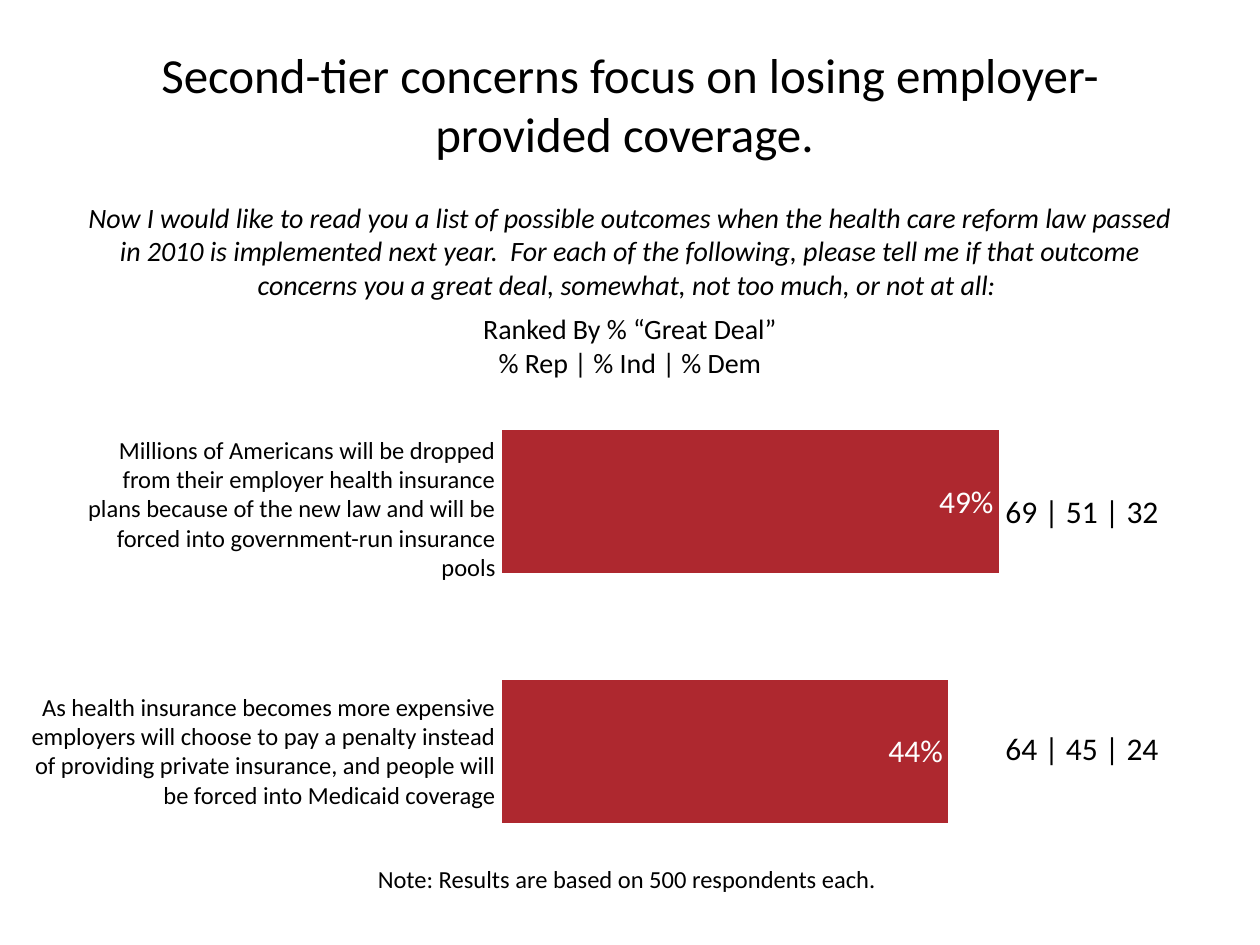
from collections import namedtuple

from pptx import Presentation
from pptx import util as u
from pptx.chart import data as chart_data
from pptx.dml.color import RGBColor
from pptx.enum import chart as chart_enum
from pptx.enum import text

BLACK = RGBColor(0x00, 0x00, 0x00)
WHITE = RGBColor(0xFF, 0xFF, 0xFF)
RED = RGBColor(0xAE, 0x28, 0x2F)
FONT = "Calibri"
ALIGN = text.PP_ALIGN

Box = namedtuple("Box", "left top width height")
Concern = namedtuple("Concern", "wording share parties label_box parties_top")

TITLE = "Second-tier concerns focus on losing employer-provided coverage. "
QUESTION = (
    "Now I would like to read you a list of possible outcomes when the health care "
    "reform law passed in 2010 is implemented next year.  For each of the following, "
    "please tell me if that outcome concerns you a great deal, somewhat, not too much, "
    "or not at all: "
)
NOTE = "Note: Results are based on 500 respondents each."
CONCERNS = [
    Concern(
        "Millions of Americans will be dropped from their employer health insurance "
        "plans because of the new law and will be forced into government-run insurance pools",
        0.49, "69 | 51 | 32", Box(23.8, 35.3, 255.6, 92.2), 68.4,
    ),
    Concern(
        "As health insurance becomes more expensive employers will choose to pay a penalty "
        "instead of providing private insurance, and people will be forced into Medicaid coverage",
        0.44, "64 | 45 | 24", Box(0, 182.2, 279.4, 74.9), 203.8,
    ),
]


def format_font(font, size, color=BLACK):
    """Set the typeface, size and colour of a font."""
    font.name = FONT
    font.size = u.Pt(size)
    font.color.rgb = color


def place(shape, box):
    """Move and size a shape to fill a box given in points."""
    shape.left, shape.top, shape.width, shape.height = map(u.Pt, box)


def format_text(shape, size, alignment):
    """Format every paragraph and run of a shape alike."""
    for paragraph in shape.text_frame.paragraphs:
        paragraph.alignment = alignment
        for run in paragraph.runs:
            format_font(run.font, size)


def add_text(slide, box, wording, size, alignment=ALIGN.LEFT, wrap=True):
    """Add a formatted text box and return it."""
    shape = slide.shapes.add_textbox(*map(u.Pt, box))
    shape.text_frame.word_wrap = wrap
    shape.text_frame.auto_size = text.MSO_AUTO_SIZE.SHAPE_TO_FIT_TEXT
    shape.text_frame.text = wording
    format_text(shape, size, alignment)
    return shape


def add_title(slide, box):
    """Fill the title placeholder."""
    title = slide.shapes.title
    place(title, box)
    title.text_frame.text = TITLE
    title.text_frame.vertical_anchor = text.MSO_ANCHOR.MIDDLE
    format_text(title, 28, ALIGN.CENTER)


def add_question(slide, box):
    """Add the survey question in italics above the two ranking lines."""
    lines = [QUESTION, "Ranked By % “Great Deal”", "% Rep | % Ind | % Dem"]
    shape = add_text(slide, box, "\n".join(lines), 16, ALIGN.CENTER)
    question = shape.text_frame.paragraphs[0]
    question.space_after = u.Pt(6)
    question.runs[0].font.italic = True


def add_bar_chart(slide, box):
    """Add the bars of the share concerned a great deal, first concern on top."""
    data = chart_data.CategoryChartData(number_format="0%")
    data.categories = [str(number + 1) for number in range(len(CONCERNS))]
    data.add_series("Series 1", [concern.share for concern in reversed(CONCERNS)])
    chart = slide.shapes.add_chart(
        chart_enum.XL_CHART_TYPE.BAR_CLUSTERED, *map(u.Pt, box), data
    ).chart
    format_font(chart.font, 18)
    chart.has_legend = False
    chart.has_title = False
    chart.category_axis.visible = False
    value_axis = chart.value_axis
    value_axis.visible = False
    value_axis.has_major_gridlines = False
    value_axis.minimum_scale = 0
    value_axis.maximum_scale = 0.6

    plot = chart.plots[0]
    plot.gap_width = 75
    plot.vary_by_categories = False
    fill = plot.series[0].format.fill
    fill.solid()
    fill.fore_color.rgb = RED
    plot.has_data_labels = True
    labels = plot.data_labels
    labels.show_value = True
    labels.number_format = "0%"
    labels.number_format_is_linked = False
    labels.position = chart_enum.XL_LABEL_POSITION.INSIDE_END
    format_font(labels.font, 18, WHITE)


def add_concerns(slide, box):
    """Add the chart with each concern on its left and the party shares on its right."""
    add_bar_chart(slide, Box(box.left + 268.6, box.top, 362.2, box.height))
    for concern in CONCERNS:
        label = concern.label_box
        label_box = label._replace(left=box.left + label.left, top=box.top + label.top)
        add_text(slide, label_box, concern.wording, 14, ALIGN.RIGHT)
        parties_box = Box(box.left + 556.6, box.top + concern.parties_top, 103, 28.8)
        add_text(slide, parties_box, concern.parties, 18, wrap=False)


def add_note(slide, box):
    """Add the note on the sample size."""
    add_text(slide, box, NOTE, 14, wrap=False)


def main():
    """Build and save the slide."""
    presentation = Presentation()
    presentation.slide_width, presentation.slide_height = u.Pt(720), u.Pt(540)
    slide = presentation.slides.add_slide(presentation.slide_layouts.get_by_name("Title Only"))
    add_title(slide, Box(36, 7.2, 648, 103.7))
    add_question(slide, Box(36, 110.9, 648, 110.2))
    add_concerns(slide, Box(10.8, 209.5, 659.6, 297.4))
    add_note(slide, Box(208.8, 490.3, 302.4, 24.5))
    presentation.save("out.pptx")


if __name__ == "__main__":
    main()
